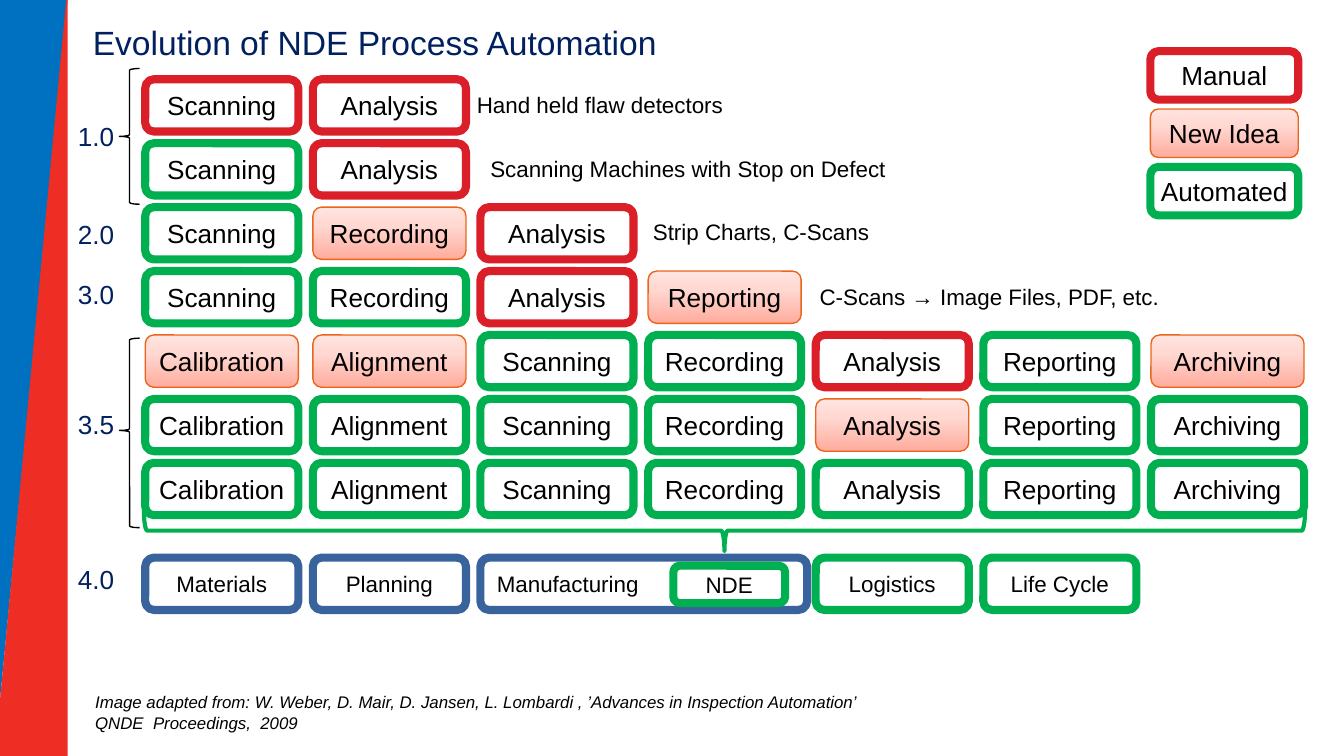
from copy import deepcopy

from pptx import Presentation
from pptx.dml.color import RGBColor as Rgb
from pptx.enum.shapes import MSO_SHAPE as Form
from pptx.enum.text import MSO_ANCHOR as Anchor, PP_ALIGN as Align
from pptx.oxml.ns import qn
from pptx.util import Pt

COLORS = {
    "white": "FFFFFF", "black": "000000", "navy": "002060",
    "blue": "0070C0", "red": "EE2D24", "manual": "DA1F28",
    "auto": "00B050", "new": "EB641B", "plant": "39639D",
    "deep": "FFAC9C", "mid": "FFD8D2", "pale": "FFE4DF",
}
FADE = [(0, "deep"), (0.65, "mid"), (1, "pale")]
KINDS = {"M": "manual", "A": "auto", "N": "new", "P": "plant"}
WIDE, HIGH = 82, 28
STEP, DROP = 89.8, 34.25

ROWS = [
    "M Scanning, M Analysis",
    "A Scanning, M Analysis",
    "A Scanning, N Recording, M Analysis",
    "A Scanning, A Recording, M Analysis, N Reporting",
    "N Calibration, N Alignment, A Scanning, A Recording, M Analysis, A Reporting, N Archiving",
    "A Calibration, A Alignment, A Scanning, A Recording, N Analysis, A Reporting, A Archiving",
    "A Calibration, A Alignment, A Scanning, A Recording, A Analysis, A Reporting, A Archiving",
]
NOTES = [
    (248.4, 45.4, "Hand held flaw detectors"),
    (255.6, 79.5, "Scanning Machines with Stop on Defect"),
    (342.7, 113.5, "Strip Charts, C-Scans"),
    (432, 148.3, "C-Scans → Image Files, PDF, etc."),
]
STAGES = [("1.0", 0), ("2.0", 52.5), ("3.0", 84.5), ("3.5", 154), ("4.0", 237)]


def tint(name):
    return Rgb.from_string(COLORS[name])


def write(shape, text, size, color="black", align=Align.LEFT, inset=None,
          anchor=Anchor.MIDDLE, looks=None, italic=False):
    frame = shape.text_frame
    frame.text = text
    frame.word_wrap = True
    frame.vertical_anchor = anchor
    if inset is not None:
        for side in ("left", "top", "right", "bottom"):
            setattr(frame, "margin_" + side, Pt(inset))
    para = frame.paragraphs[0]
    for key, value in {"alignment": align, **(looks or {})}.items():
        setattr(para, key, value)
    for run in para.runs:
        for key, value in {"name": "Arial", "size": Pt(size), "italic": italic}.items():
            setattr(run.font, key, value)
        run.font.color.rgb = tint(color)


def label(slide, x, y, w, h, text, size, **looks):
    write(slide.shapes.add_textbox(Pt(x), Pt(y), Pt(w), Pt(h)), text, size, **looks)


def fade(shape):
    shape.fill.gradient()
    shape.fill.gradient_angle = 90
    stops = shape.element.spPr.find(".//" + qn("a:gsLst"))
    stops.append(deepcopy(stops[-1]))
    for stop, (place, name) in zip(shape.fill.gradient_stops, FADE):
        stop.position = place
        stop.color.rgb = tint(name)


def form(slide, kind, x, y, w, h, color, weight):
    shape = slide.shapes.add_shape(kind, Pt(x), Pt(y), Pt(w), Pt(h))
    shape.shadow.inherit = False
    shape.line.color.rgb = tint(color)
    shape.line.width = Pt(weight)
    return shape


def card(slide, x, y, item, size=14, w=WIDE, h=HIGH, align=Align.CENTER):
    code, text = item.split(" ", 1)
    new = code == "N"
    shape = form(slide, Form.ROUNDED_RECTANGLE, x, y, w, h,
                 KINDS[code], 0.75 if new else 4.33)
    if new:
        fade(shape)
    else:
        shape.fill.solid()
        shape.fill.fore_color.rgb = tint("white")
    write(shape, text, size, align=align, inset=1.44)
    return shape


def brace(slide, x, y, w, h, color="black", weight=0.75, turn=0, tip=0.5):
    shape = form(slide, Form.LEFT_BRACE, x, y, w, h, color, weight)
    shape.fill.background()
    shape.adjustments[0] = 0.083
    shape.adjustments[1] = tip
    shape.rotation = turn


def band(slide, x, y, w, h):
    fold = y + 375
    areas = {
        "blue": [(x, y), (x + w, y), (x, fold)],
        "red": [(x + w - 0.7, y), (x + w, y), (x + w, y + h), (x, y + h), (x, fold)],
    }
    for name, spots in areas.items():
        first, *rest = [(Pt(a), Pt(b)) for a, b in spots]
        path = slide.shapes.build_freeform(*first)
        path.add_line_segments(rest, close=True)
        shape = path.convert_to_shape()
        shape.shadow.inherit = False
        shape.fill.solid()
        shape.fill.fore_color.rgb = tint(name)
        shape.line.fill.background()


def head(slide, x, y, w, h):
    title = slide.shapes.title
    for key, value in {"left": x, "top": y, "width": w, "height": h}.items():
        setattr(title, key, Pt(value))
    write(title, "Evolution of NDE Process Automation", 18, "navy", inset=0.72,
          looks={"space_before": Pt(4)})


def stages(slide, x, y):
    for text, drop in STAGES:
        label(slide, x, y + drop, 22.3, 18.7, text, 14, color="navy",
              inset=0.72, looks={"line_spacing": Pt(12)})
    brace(slide, x + 23, y - 29.5, 10.8, 72.7)
    brace(slide, x + 23, y + 115, 10.8, 101.5, tip=0.487)


def steps(slide, x, y):
    for row, line in enumerate(ROWS):
        for col, item in enumerate(line.split(", ")):
            card(slide, x + col * STEP, y + row * DROP, item)
    for left, top, text in NOTES:
        label(slide, left, top, 227.5, 21.6, text, 12, anchor=Anchor.TOP)


def legend(slide, x, y):
    for row, item in enumerate(["M Manual", "N New Idea", "A Automated"]):
        card(slide, x, y + row * 31, item, w=79.2, h=26)


def plant(slide, x, y):
    parts = {0: "P Materials", 1: "P Planning", 4: "A Logistics", 5: "A Life Cycle"}
    for col, item in parts.items():
        card(slide, x + col * STEP, y, item, 12)
    made = card(slide, x + 2 * STEP, y, "P Manufacturing", 12, w=175, align=Align.LEFT)
    made.text_frame.paragraphs[0]._p.get_or_add_pPr().set("marL", str(Pt(6)))
    card(slide, x + 283, y + 4.3, "A NDE", 12, w=59.8, h=20)
    brace(slide, x + 299.5, y - 325.5, 21.6, 622, "auto", 2.25, 270)


def source(slide, x, y, w, h):
    label(slide, x, y, w, h,
          "Image adapted from: W. Weber, D. Mair, D. Jansen, L. Lombardi , "
          "’Advances in Inspection Automation’\vQNDE  Proceedings,  2009",
          9, anchor=Anchor.TOP, italic=True)


def main():
    deck = Presentation()
    deck.slide_width, deck.slide_height = Pt(720), Pt(405)
    slide = deck.slides.add_slide(deck.slide_layouts[5])
    band(slide, 0, 0, 36.2, 405)
    head(slide, 49, 10.8, 311, 23)
    stages(slide, 41, 66.2)
    steps(slide, 77.8, 42.5)
    legend(slide, 616.3, 27.4)
    plant(slide, 77.8, 298.8)
    source(slide, 43.9, 367.2, 458.6, 28.8)
    deck.save("out.pptx")


if __name__ == "__main__":
    main()
